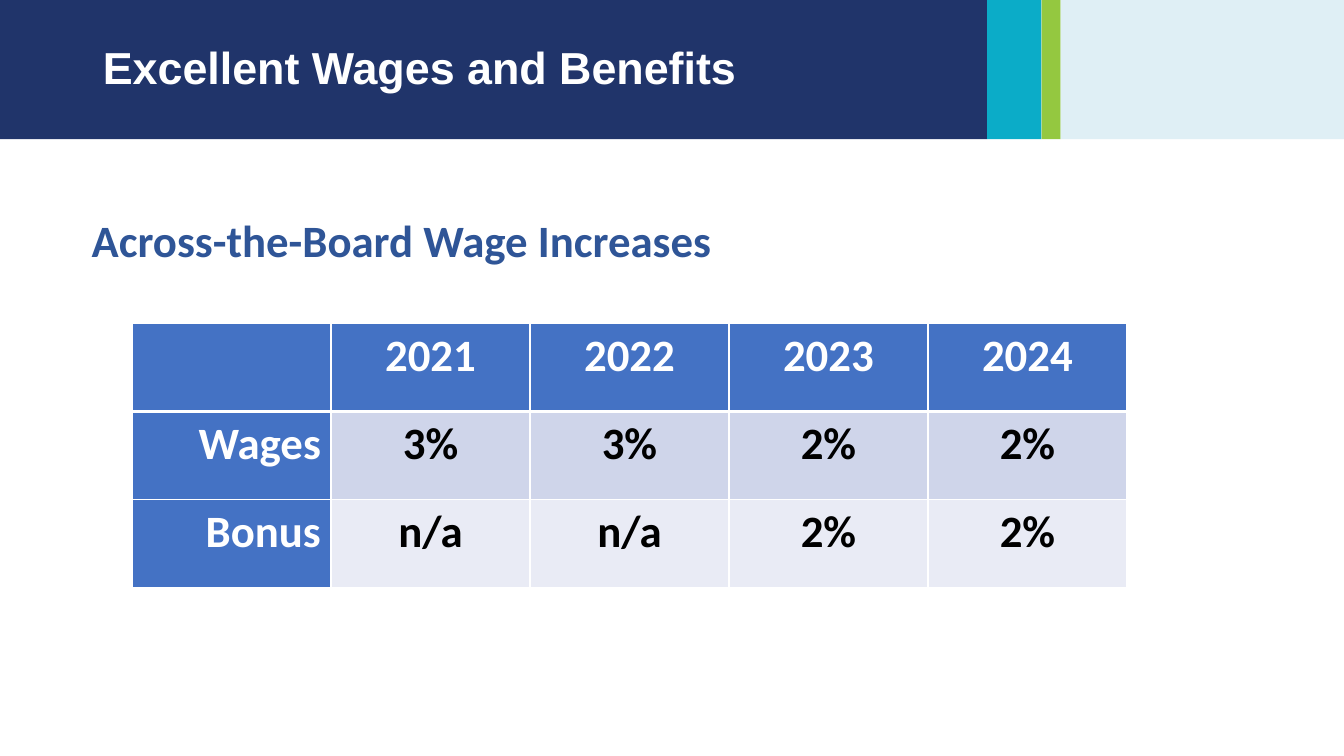
from dataclasses import dataclass

from lxml.etree import SubElement
from pptx import Presentation
from pptx.dml.color import RGBColor
from pptx.enum.shapes import MSO_SHAPE
from pptx.enum.text import MSO_ANCHOR, PP_ALIGN
from pptx.oxml import parse_xml
from pptx.oxml.ns import nsdecls, qn
from pptx.util import Emu, Pt

PX = 9144  # 100 px to the inch


@dataclass(frozen=True)
class Theme:
    navy: str = "20346A"
    teal: str = "0BACC8"
    green: str = "94C840"
    pale: str = "DFEFF5"
    heading: str = "2F5597"
    header: str = "4472C4"
    bands: tuple = ("CFD5EA", "E9EBF5")
    white: str = "FFFFFF"
    black: str = "000000"
    title_font: str = "Arial"
    body_font: str = "Calibri"
    size: int = 32


THEME = Theme()
BANNER_HEIGHT = 138
BANNER = [(979, THEME.navy), (54, THEME.teal), (19, THEME.green), (281, THEME.pale)]
WAGES = [
    ["", "2021", "2022", "2023", "2024"],
    ["Wages", "3%", "3%", "2%", "2%"],
    ["Bonus", "n/a", "n/a", "2%", "2%"],
]


def px(*lengths):
    return [Emu(length * PX) for length in lengths]


def paint(fill, color):
    fill.solid()
    fill.fore_color.rgb = RGBColor.from_string(color)


def write(frame, text, *, color, font=THEME.body_font, align=PP_ALIGN.LEFT,
          line=1.0, after=0, plain=False):
    """Fill a text frame with one bold paragraph; plain removes the bullet and indent."""
    frame.text = text
    para = frame.paragraphs[0]
    if plain:
        properties = para._p.get_or_add_pPr()
        properties.set("marL", "0")
        properties.set("indent", "0")
        SubElement(properties, qn("a:buNone"))
    para.alignment = align
    para.line_spacing = line
    para.space_before = Pt(0)
    para.space_after = Pt(after)
    for span in para.runs:
        span.font.name = font
        span.font.size = Pt(THEME.size)
        span.font.bold = True
        span.font.color.rgb = RGBColor.from_string(color)


def place(shape, left, top, width, height):
    shape.left, shape.top, shape.width, shape.height = px(left, top, width, height)


def add_banner(page):
    left = 0
    for width, color in BANNER:
        block = page.shapes.add_shape(
            MSO_SHAPE.RECTANGLE, *px(left, 0, width, BANNER_HEIGHT))
        block.shadow.inherit = False
        paint(block.fill, color)
        block.line.fill.background()
        left += width


def add_title(page, text):
    title = page.shapes.title
    place(title, 92, 0, 888, BANNER_HEIGHT)
    title.text_frame.vertical_anchor = MSO_ANCHOR.MIDDLE
    write(title.text_frame, text, color=THEME.white, font=THEME.title_font, line=0.9)
    page.shapes._spTree.append(title._element)  # in front of the banner


def add_heading(page, text):
    body = page.placeholders[1]
    place(body, 81, 198, 1150, 192)
    body.text_frame.vertical_anchor = MSO_ANCHOR.TOP
    write(body.text_frame, text, color=THEME.heading, line=1.15, after=7.5, plain=True)
    page.shapes._spTree.append(body._element)  # in front of the table


def set_borders(cell, bottom):
    properties = cell._tc.get_or_add_tcPr()
    for index, (side, points) in enumerate(zip("LRTB", (1, 1, 1, bottom))):
        properties.insert(index, parse_xml(
            f'<a:ln{side} {nsdecls("a")} w="{Pt(points)}"><a:solidFill>'
            f'<a:srgbClr val="{THEME.white}"/></a:solidFill></a:ln{side}>'))


def add_wage_table(page, rows):
    table = page.shapes.add_table(
        len(rows), len(rows[0]), *px(131, 321, 987, 262)).table
    for row_index, row in enumerate(rows):
        for column_index, text in enumerate(row):
            cell = table.cell(row_index, column_index)
            is_head = row_index == 0 or column_index == 0
            paint(cell.fill, THEME.header if is_head else THEME.bands[row_index - 1])
            set_borders(cell, bottom=3 if row_index == 0 else 1)
            write(cell.text_frame, text,
                  color=THEME.white if is_head else THEME.black,
                  align=PP_ALIGN.CENTER if column_index else PP_ALIGN.RIGHT)


def main():
    deck = Presentation()
    deck.slide_width, deck.slide_height = px(1333, 750)
    page = deck.slides.add_slide(deck.slide_layouts[1])
    add_banner(page)
    add_title(page, "Excellent Wages and Benefits")
    add_wage_table(page, WAGES)
    add_heading(page, "Across-the-Board Wage Increases")
    deck.save("out.pptx")


if __name__ == "__main__":
    main()
